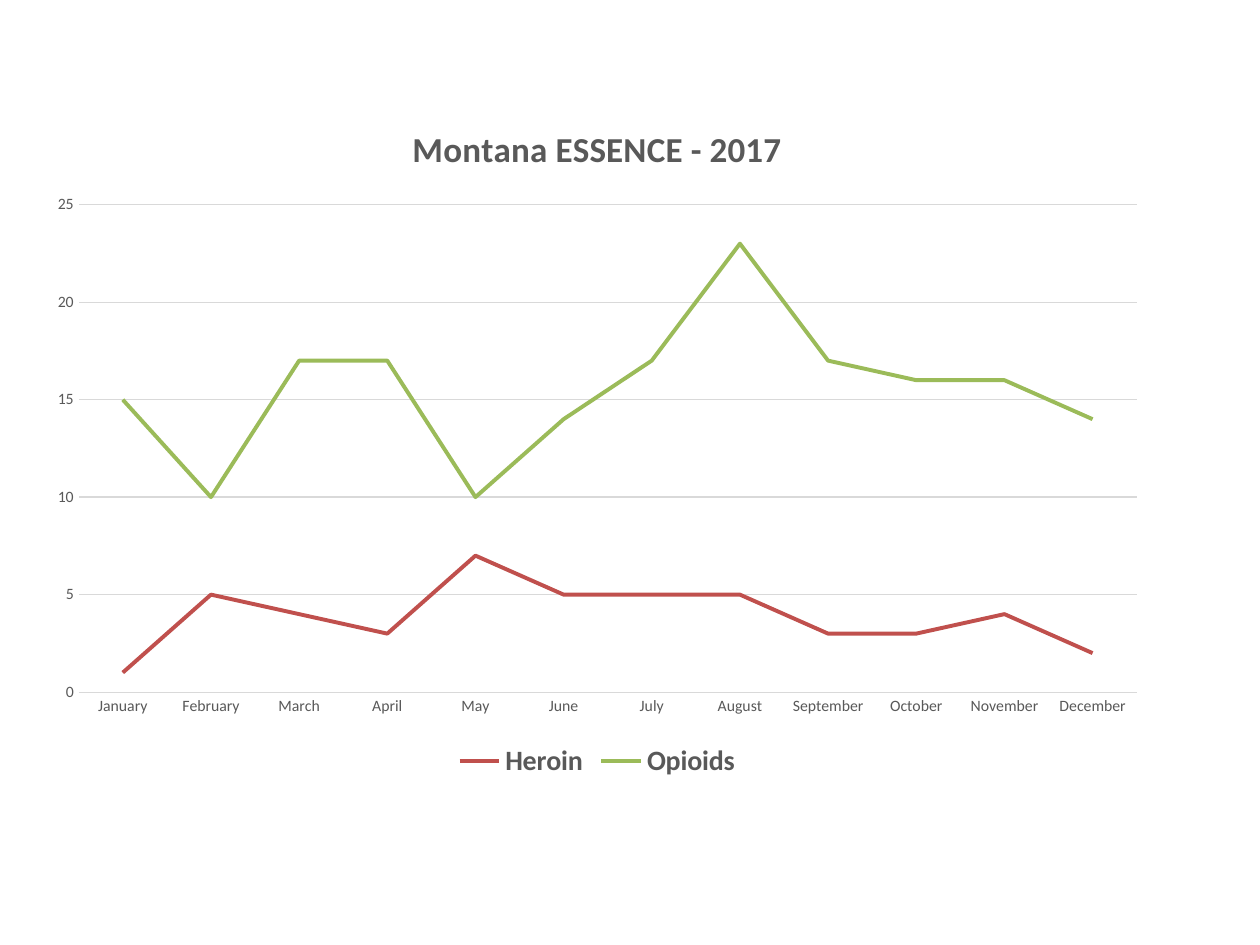
from pptx import Presentation
from pptx import util as u
from pptx.chart import data
from pptx.dml import color
from pptx.enum import chart as ch

GREY, RULE = "595959", "D9D9D9"
MONTHS = ["January", "February", "March", "April", "May", "June", "July",
          "August", "September", "October", "November", "December"]
SERIES = [
    ("Heroin", "C0504D", [1, 5, 4, 3, 7, 5, 5, 5, 3, 3, 4, 2]),
    ("Opioids", "9BBB59", [15, 10, 17, 17, 10, 14, 17, 23, 17, 16, 16, 14]),
]


def rgb(code):
    """Turn a hex string into a colour."""
    return color.RGBColor.from_string(code)


def style(font, size, bold=False):
    """Set the look of chart text."""
    font.name, font.size, font.bold = "Calibri", u.Pt(size), bold
    font.color.rgb = rgb(GREY)


def stroke(line, code, width):
    """Set the colour and width of a line."""
    line.color.rgb, line.width = rgb(code), u.Pt(width)


def set_axes(chart):
    """Format the month and count axes."""
    month, count = chart.category_axis, chart.value_axis
    for axis in (month, count):
        axis.major_tick_mark = axis.minor_tick_mark = ch.XL_TICK_MARK.NONE
        style(axis.tick_labels.font, 9)
    stroke(month.format.line, RULE, 0.75)
    count.format.line.fill.background()
    count.minimum_scale, count.maximum_scale, count.major_unit = 0, 25, 5
    count.has_major_gridlines = True
    stroke(count.major_gridlines.format.line, RULE, 0.75)
    count.tick_labels.number_format = "0"
    count.tick_labels.number_format_is_linked = False


def add_trend(slide, left, top, width, height):
    """Draw the monthly line chart in the given box."""
    table = data.CategoryChartData(number_format="0")
    table.categories = MONTHS
    for name, _, counts in SERIES:
        table.add_series(name, counts)
    box = [u.Inches(n) for n in (left, top, width, height)]
    chart = slide.shapes.add_chart(ch.XL_CHART_TYPE.LINE, *box, table).chart
    style(chart.font, 10)
    title = chart.chart_title.text_frame
    title.text = "Montana ESSENCE - 2017"
    style(title.paragraphs[0].runs[0].font, 20, True)
    chart.chart_title.include_in_layout = False
    set_axes(chart)
    chart.has_legend = True
    chart.legend.position = ch.XL_LEGEND_POSITION.BOTTOM
    chart.legend.include_in_layout = False
    style(chart.legend.font, 16, True)
    chart.plots[0].vary_by_categories = False
    for line, (_, code, _) in zip(chart.plots[0].series, SERIES):
        line.smooth = False
        line.marker.style = ch.XL_MARKER_STYLE.NONE
        stroke(line.format.line, code, 2.25)


def main():
    """Build and save the slide."""
    deck = Presentation()
    deck.slide_width, deck.slide_height = u.Inches(10), u.Inches(7.5)
    slide = deck.slides.add_slide(deck.slide_layouts[6])
    add_trend(slide, 0.28, 0.77, 8.92, 5.45)
    deck.save("out.pptx")


if __name__ == "__main__":
    main()
